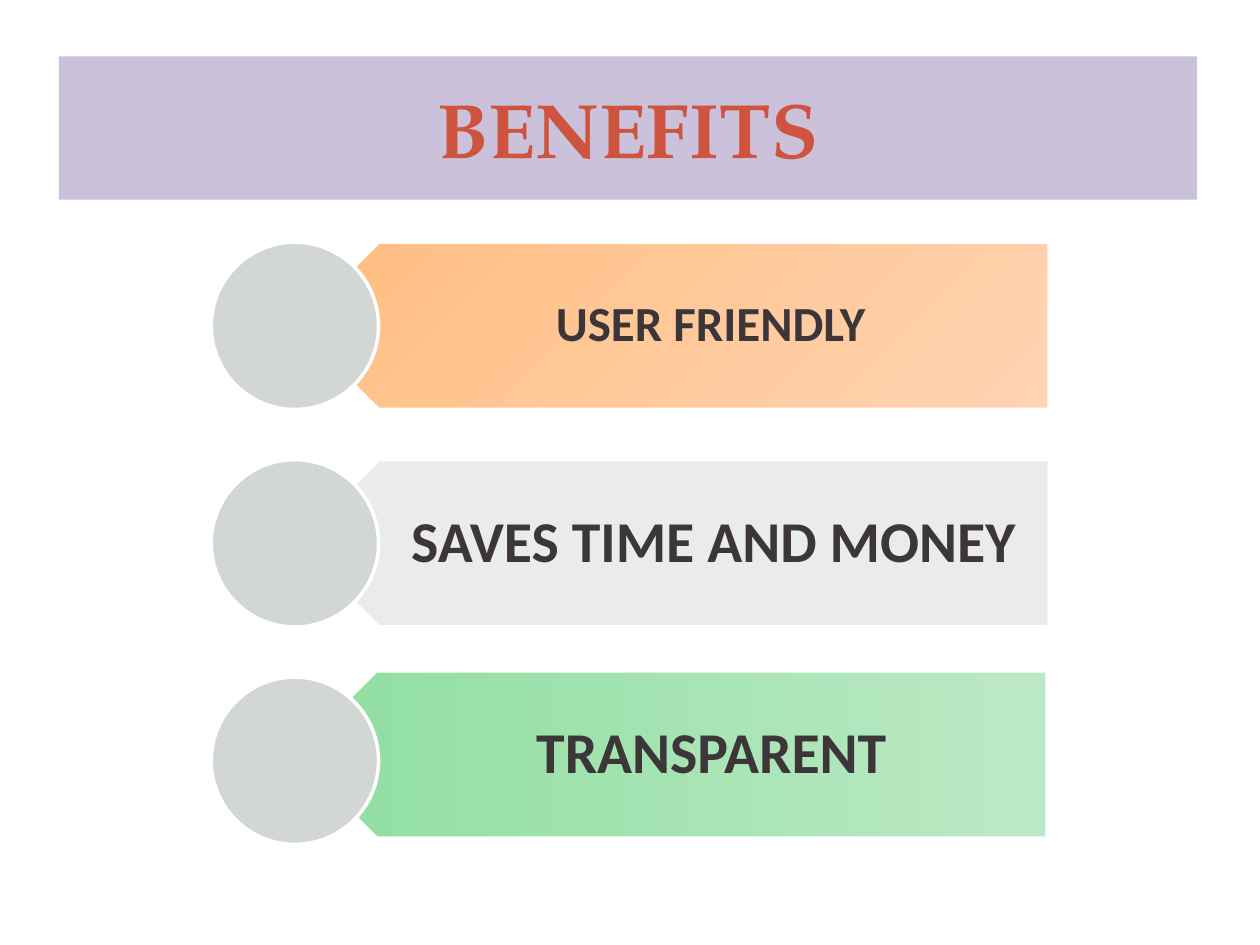
import pptx
import pptx.util
import pptx.dml.color
import pptx.enum.shapes
import pptx.enum.text

Pt = pptx.util.Pt
SHAPES = pptx.enum.shapes.MSO_SHAPE
COLORS = {
    "white": "FFFFFF",
    "lilac": "CCC1DA",
    "red": "CF543F",
    "ink": "3C3639",
    "disc": "D2D7D4",
    "orange": "FFBD80",
    "peach": "FFD4B3",
    "mist": "E9ECEB",
    "green": "8FDEA0",
    "mint": "BCE9C5",
}
SIZE = 95.6
BAR_WIDTH = 431
DISC_LEFT = 120.7
DISC_TOP = 138.4
STEP = 124.25


def rgb(name):
    return pptx.dml.color.RGBColor.from_string(COLORS[name])


def paint(shape, tones, angle=0, edge=True):
    shape.shadow.inherit = False
    if len(tones) == 1:
        shape.fill.solid()
        shape.fill.fore_color.rgb = rgb(tones[0])
    else:
        shape.fill.gradient()
        shape.fill.gradient_angle = angle
        for stop, tone in zip(shape.fill.gradient_stops, tones):
            stop.color.rgb = rgb(tone)
    if edge:
        shape.line.color.rgb = rgb("white")
        shape.line.width = Pt(2)
    else:
        shape.line.fill.background()


def write(shape, text, font, size, tone):
    frame = shape.text_frame
    frame.word_wrap = True
    frame.vertical_anchor = pptx.enum.text.MSO_ANCHOR.MIDDLE
    para = frame.paragraphs[0]
    para.alignment = pptx.enum.text.PP_ALIGN.CENTER
    run = para.add_run()
    run.text = text
    run.font.name = font
    run.font.size = Pt(size)
    run.font.bold = True
    run.font.color.rgb = rgb(tone)
    return para


def add_title(slide, text):
    box = slide.shapes.add_shape(
        SHAPES.RECTANGLE, Pt(33.7), Pt(32.3), Pt(650.2), Pt(81.8))
    paint(box, ["lilac"], edge=False)
    write(box, text, "TeX Gyre Pagella", 44, "red")


def add_bar(slide, left, top, text, size, tones, angle, right, pad, after):
    end, neck, foot = left + BAR_WIDTH, left + SIZE / 2, top + SIZE
    points = [(neck, foot), (left, top + SIZE / 2), (neck, top), (end, top)]
    outline = slide.shapes.build_freeform(Pt(end), Pt(foot))
    outline.add_line_segments([(Pt(x), Pt(y)) for x, y in points], close=True)
    bar = outline.convert_to_shape()
    paint(bar, tones, angle)
    para = write(bar, text, "Calibri", size, "ink")
    para.line_spacing = 0.9
    para.space_after = Pt(after)
    frame = bar.text_frame
    frame.margin_left, frame.margin_right = Pt(66.2), Pt(right)
    frame.margin_top = frame.margin_bottom = Pt(pad)


def add_disc(slide, top):
    disc = slide.shapes.add_shape(
        SHAPES.OVAL, Pt(DISC_LEFT), Pt(top), Pt(SIZE), Pt(SIZE))
    paint(disc, ["disc"])


def main():
    deck = pptx.Presentation()
    deck.slide_width, deck.slide_height = Pt(720), Pt(540)
    slide = deck.slides.add_slide(deck.slide_layouts[6])
    add_title(slide, "BENEFITS")
    bars = [
        (0, 0, "USER FRIENDLY ", 28, ["orange", "peach"], 315, 15.8, 8.6, 12),
        (0, 0, "SAVES TIME AND MONEY", 33, ["mist"], 0, 18.7, 10, 14),
        (-1.2, -3.6, "TRANSPARENT", 33, ["green", "mint"], 0, 18.7, 10, 14),
    ]
    for row, (dx, dy, *style) in enumerate(bars):
        top = DISC_TOP + row * STEP
        add_bar(slide, DISC_LEFT + SIZE / 2 + dx, top + dy, *style)
        add_disc(slide, top)
    deck.save("out.pptx")


if __name__ == "__main__":
    main()
